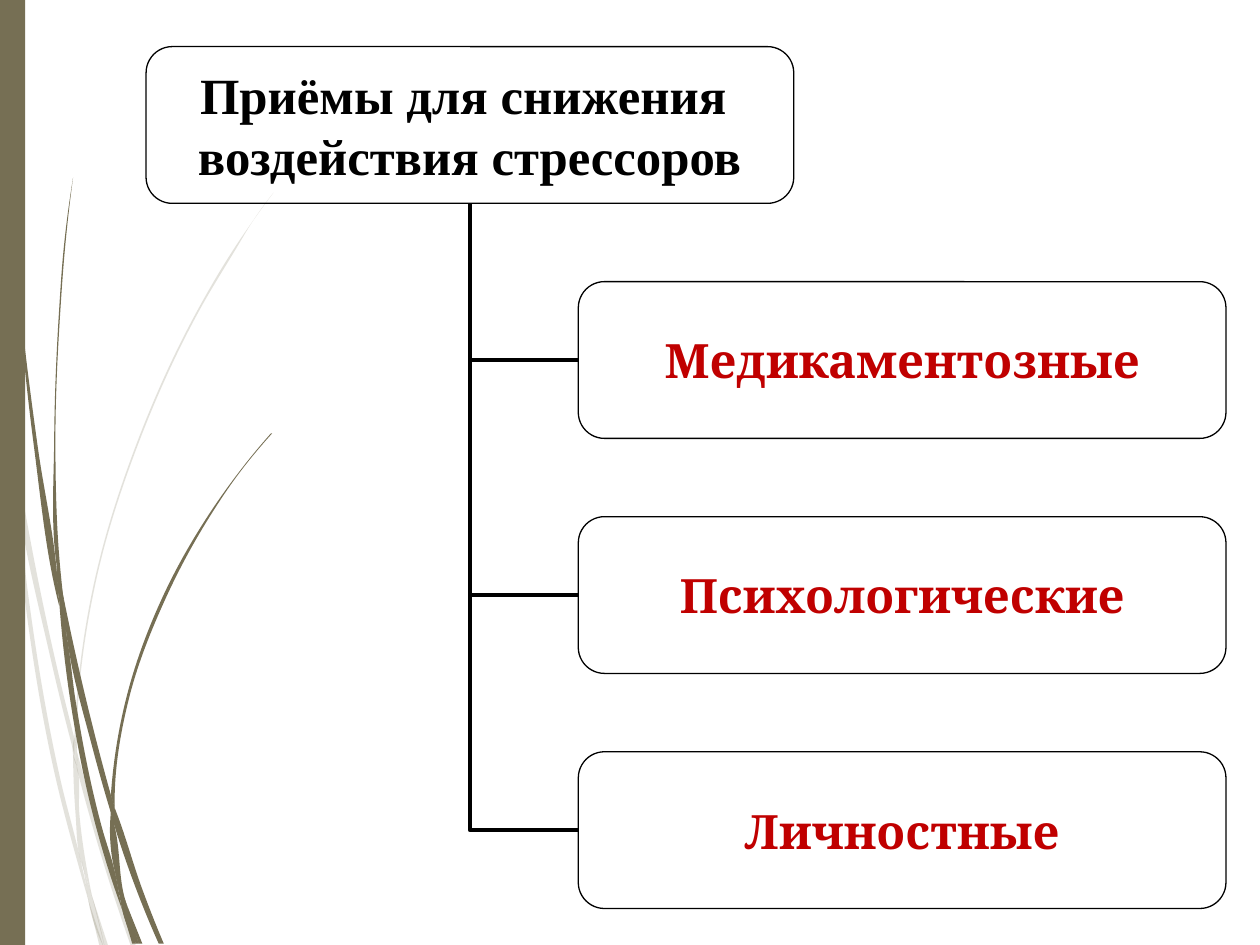
from math import dist

from lxml.etree import SubElement
from pptx import Presentation
from pptx.dml.color import RGBColor
from pptx.enum.shapes import MSO_CONNECTOR, MSO_SHAPE
from pptx.enum.text import MSO_ANCHOR, PP_ALIGN
from pptx.oxml.ns import qn
from pptx.util import Inches, Pt

OLIVE = RGBColor(0x76, 0x6F, 0x54)
BLACK = RGBColor(0, 0, 0)
RED = RGBColor(0xC0, 0, 0)

HEADING = ["Приёмы для снижения ", "воздействия стрессоров"]
METHODS = ["Медикаментозные", "Психологические", "Личностные"]

ROOT_LEFT, METHOD_LEFT, TOP = 1.16, 4.59, 0.37
DIAGRAM_HEIGHT, BOX_WIDTH = 6.84, 5.14
BOX_HEIGHT = DIAGRAM_HEIGHT / (1 + 1.5 * len(METHODS))
ROW_STEP = 1.5 * BOX_HEIGHT

PALE_BLADES = [
    ([(0, 2.82), (0.06, 3.22), (0.08, 3.5)],
     [(0, 2.99), (0.07, 3.44), (0.08, 3.5)]),
    ([(0.1, 3.45), (0.43, 5.2), (0.59, 5.86)],
     [(0.1, 3.45), (0.12, 3.76), (0.4, 5.22), (0.59, 5.99)]),
    ([(0.61, 5.96), (0.64, 6.07), (0.88, 6.92), (1.08, 7.51)],
     [(0.61, 6.1), (0.85, 6.94), (1.04, 7.51)]),
    ([(0.73, 7.11), (0.86, 7.51)],
     [(0.73, 7.11), (0.83, 7.51)]),
    ([(0.08, 3.5), (0.12, 3.76), (0.22, 4.69), (0.48, 6.19), (0.64, 6.83), (0.69, 7.07), (0.7, 7.14)],
     [(0.08, 3.5), (0.19, 4.7), (0.45, 6.21), (0.64, 6.93), (0.7, 7.14)]),
    ([(0.58, 5.99), (0.61, 6.08), (0.63, 6.46), (0.72, 7.06), (0.73, 7.11)],
     [(0.58, 5.99), (0.6, 6.46), (0.64, 6.83), (0.67, 6.92), (0.73, 7.11)]),
    ([(2.17, 1.53), (2.01, 1.75), (1.87, 1.98), (1.59, 2.45), (1.11, 3.49), (0.76, 4.62), (0.61, 5.84), (0.61, 5.96)],
     [(2.17, 1.53), (2.01, 1.75), (1.86, 1.97), (1.58, 2.44), (1.1, 3.48), (0.75, 4.61), (0.59, 5.86)]),
    ([(0.7, 7.14), (0.82, 7.51)],
     [(0.7, 7.14), (0.79, 7.51)]),
    ([(0.59, 5.86), (0.61, 5.96), (0.61, 6.1)],
     [(0.59, 5.86), (0.58, 5.99), (0.61, 6.08)]),
    ([(0.65, 6.83), (0.67, 6.92), (0.73, 7.11), (0.83, 7.51)],
     [(0.65, 6.83), (0.69, 7.07), (0.7, 7.14), (0.82, 7.51)]),
]
DARK_BLADES = [
    ([(0.03, 0), (0.04, 0.48), (0.06, 1.09), (0.15, 2.32), (0.3, 3.55), (0.45, 4.53), (0.47, 4.81)],
     [(0.02, 0), (0.03, 0.48), (0.05, 1.1), (0.14, 2.33), (0.27, 3.55), (0.46, 4.77), (0.47, 4.81)]),
    ([(0.5, 4.72), (0.77, 5.9), (0.88, 6.31)],
     [(0.5, 4.72), (0.53, 5.05), (0.73, 5.92), (0.88, 6.45)]),
    ([(0.91, 6.41), (0.94, 6.49), (1.13, 7.06), (1.3, 7.49)],
     [(0.91, 6.56), (1.09, 7.08), (1.26, 7.49)]),
    ([(0.47, 4.77), (0.53, 5.05), (0.6, 5.56), (0.81, 6.57), (0.91, 6.91), (0.96, 7.17), (0.97, 7.22)],
     [(0.47, 4.77), (0.56, 5.57), (0.77, 6.59), (0.92, 7.08), (0.97, 7.22)]),
    ([(0.58, 1.41), (0.52, 1.93), (0.48, 2.45), (0.44, 3.49), (0.48, 4.53), (0.5, 4.72)],
     [(0.58, 1.41), (0.51, 1.93), (0.47, 2.45), (0.43, 3.49), (0.45, 4.49), (0.49, 4.72)]),
    ([(1.01, 7.19), (1.13, 7.49)],
     [(1.01, 7.19), (1.1, 7.49)]),
    ([(0.45, 4.49), (0.5, 4.72), (0.53, 5.05)],
     [(0.45, 4.53), (0.47, 4.77), (0.53, 5.05)]),
    ([(2.16, 3.44), (2.03, 3.59), (1.91, 3.74), (1.69, 4.06), (1.31, 4.76), (1.03, 5.52), (0.91, 6.33), (0.91, 6.41)],
     [(2.15, 3.44), (2.03, 3.58), (1.91, 3.73), (1.68, 4.05), (1.29, 4.74), (1.01, 5.51), (0.88, 6.31)]),
    ([(0.97, 7.22), (1.08, 7.49)],
     [(0.97, 7.22), (1.05, 7.49)]),
    ([(0.88, 6.45), (0.91, 6.56), (1, 7.16), (1.01, 7.19)],
     [(0.88, 6.45), (0.91, 6.91), (1.01, 7.19)]),
    ([(0.88, 6.31), (0.91, 6.41), (0.91, 6.56)],
     [(0.88, 6.31), (0.88, 6.45), (0.91, 6.56)]),
    ([(0.91, 6.91), (0.96, 7.06), (1.01, 7.19), (1.1, 7.49)],
     [(0.91, 6.91), (0.96, 7.17), (0.97, 7.22), (1.08, 7.49)]),
]


def edge_controls(points):
    lengths = [dist(a, b) for a, b in zip(points, points[1:])]
    chords = [((b[0] - a[0]) / n, (b[1] - a[1]) / n) for a, b, n in zip(points, points[1:], lengths)]
    inner = [tuple((a * n + b * m) / (m + n) for a, b in zip(before, after))
             for before, after, m, n in zip(chords, chords[1:], lengths, lengths[1:])]
    first, final = chords[0], chords[-1]
    if inner:
        first = tuple(2 * a - b for a, b in zip(first, inner[0]))
        final = tuple(2 * a - b for a, b in zip(final, inner[-1]))
    slopes = [first, *inner, final]
    return [(tuple(p + s * n / 3 for p, s in zip(points[i], slopes[i])),
             tuple(p - s * n / 3 for p, s in zip(points[i + 1], slopes[i + 1])))
            for i, n in enumerate(lengths)]


def paint(shape, opacity=100):
    shape.shadow.inherit = False
    shape.fill.solid()
    shape.fill.fore_color.rgb = OLIVE
    shape.line.fill.background()
    if opacity < 100:
        color = next(shape._element.spPr.iter(qn("a:srgbClr")))
        SubElement(color, qn("a:alpha")).set("val", str(opacity * 1000))


def add_blade(group, right_edge, left_edge, opacity):
    back = left_edge[::-1]
    meets = right_edge[-1] == back[0]
    outline = right_edge + (back[1:] if meets else back)
    controls = edge_controls(right_edge) + ([] if meets else [None]) + edge_controls(back)
    corners = [(Inches(x), Inches(y)) for x, y in outline]
    builder = group.shapes.build_freeform(*corners[0])
    builder.add_line_segments(corners[1:])
    blade = builder.convert_to_shape()
    for segment, pair in zip(list(blade._element.iter(qn("a:lnTo"))), controls):
        if pair:
            segment.tag = qn("a:cubicBezTo")
            for place, (x, y) in enumerate(pair):
                point = SubElement(segment, qn("a:pt"))
                point.set("x", str(Inches(x) - blade.left))
                point.set("y", str(Inches(y) - blade.top))
                segment.insert(place, point)
    paint(blade, opacity)


def decorate_master(deck, slide):
    backdrop = deck.slide_master.shapes._spTree
    for blades, opacity in ((PALE_BLADES, 20), (DARK_BLADES, 100)):
        group = slide.shapes.add_group_shape()
        for right_edge, left_edge in blades:
            add_blade(group, right_edge, left_edge, opacity)
        backdrop.append(group._element)
    stripe = slide.shapes.add_shape(MSO_SHAPE.RECTANGLE, 0, 0, Inches(0.2), deck.slide_height)
    paint(stripe)
    backdrop.append(stripe._element)


def add_box(diagram, left, row, lines, font_name, size, color):
    box = diagram.shapes.add_shape(MSO_SHAPE.ROUNDED_RECTANGLE, Inches(left), Inches(TOP + row * ROW_STEP),
                                   Inches(BOX_WIDTH), Inches(BOX_HEIGHT))
    box.shadow.inherit = False
    box.fill.background()
    box.line.color.rgb = BLACK
    box.line.width = Pt(0.75)
    frame = box.text_frame
    frame.word_wrap = False
    frame.vertical_anchor = MSO_ANCHOR.MIDDLE
    frame.margin_left = frame.margin_right = frame.margin_top = frame.margin_bottom = 0
    frame.text = "\n".join(lines)
    for paragraph in frame.paragraphs:
        paragraph.alignment = PP_ALIGN.CENTER
        for run in paragraph.runs:
            run.font.name = font_name
            run.font.size = Pt(size)
            run.font.bold = True
            run.font.color.rgb = color
    return box


def link(diagram, method, root):
    branch = diagram.shapes.add_connector(MSO_CONNECTOR.ELBOW, method.left, method.top, root.left, root.top)
    branch.begin_connect(method, 1)
    branch.end_connect(root, 2)
    properties = branch._element.spPr
    properties.find(qn("a:prstGeom")).set("prst", "bentConnector2")
    branch.line.color.rgb = BLACK
    branch.line.width = Pt(2.25)
    SubElement(properties, qn("a:effectLst"))


def main():
    deck = Presentation()
    deck.slide_width, deck.slide_height = Inches(10), Inches(7.5)
    slide = deck.slides.add_slide(deck.slide_layouts[6])
    decorate_master(deck, slide)
    diagram = slide.shapes.add_group_shape()
    root = add_box(diagram, ROOT_LEFT, 0, HEADING, "Times New Roman", 29, BLACK)
    for row, name in enumerate(METHODS, start=1):
        method = add_box(diagram, METHOD_LEFT, row, [name], "Cambria", 27, RED)
        link(diagram, method, root)
    deck.save("out.pptx")


if __name__ == "__main__":
    main()
